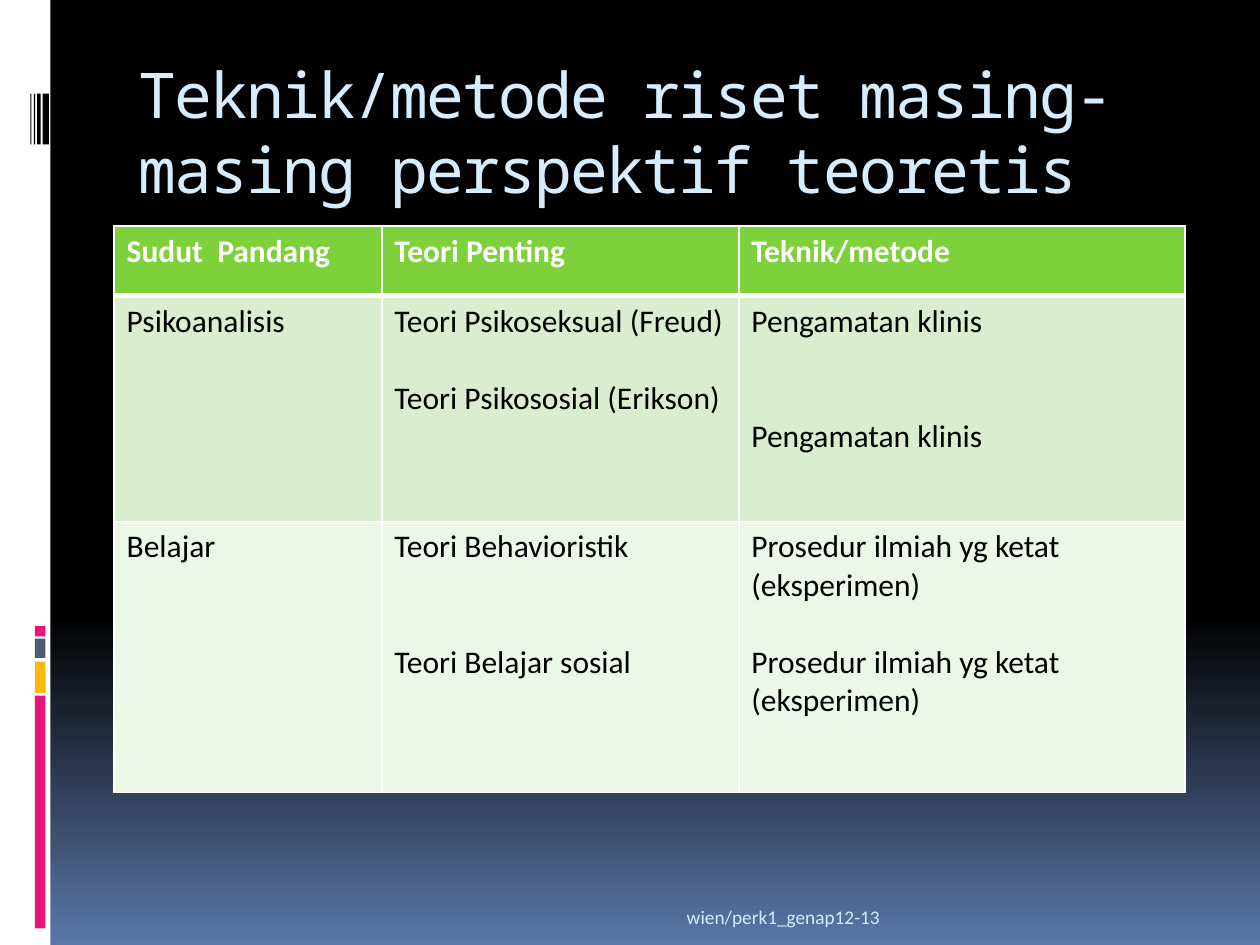
from lxml import etree
from pptx import Presentation, util as u
from pptx.dml.color import RGBColor
from pptx.enum import shapes, text
from pptx.oxml.ns import qn

PINK, BLACK, WHITE, PALE = "EA157A", "000000", "FFFFFF", "D6ECFF"
LINE = 22


def color(value):
    return RGBColor.from_string(value)


def write(para, words, size=18, font="Calibri", ink=BLACK, bold=False, tracking=0):
    span = para.add_run()
    span.text = words
    span.font.size = u.Pt(size)
    span.font.name = font
    span.font.color.rgb = color(ink)
    span.font.bold = bold
    if tracking:
        span._r.get_or_add_rPr().set("spc", str(tracking * 100))


class SlideBuilder:
    def __init__(self, slide):
        self.slide = slide

    def background(self, top, bottom, start):
        fill = self.slide.background.fill
        fill.gradient()
        fill.gradient_angle = 270
        for stop, ink, position in zip(fill.gradient_stops, (top, bottom), (start, 1)):
            stop.color.rgb = color(ink)
            stop.position = position

    def bar(self, left, top, width, height, ink):
        shape = self.slide.shapes.add_shape(
            shapes.MSO_SHAPE.RECTANGLE, *map(u.Pt, (left, top, width, height)))
        shape.shadow.inherit = False
        shape.fill.solid()
        shape.fill.fore_color.rgb = color(ink)
        shape.line.fill.background()

    def label(self, left, top, width, height, words, anchor="TOP", align="LEFT",
              spacing=None, inset=3.6, **style):
        box = self.slide.shapes.add_textbox(*map(u.Pt, (left, top, width, height)))
        frame = box.text_frame
        frame.word_wrap = True
        frame.margin_top = u.Pt(inset)
        frame.vertical_anchor = text.MSO_ANCHOR[f"{anchor}"]
        para = frame.paragraphs[0]
        para.alignment = text.PP_ALIGN[align]
        if spacing:
            para.line_spacing = u.Pt(spacing)
        write(para, words, **style)

    def borders(self, cell, below):
        props = cell._tc.get_or_add_tcPr()
        for index, (side, weight) in enumerate(
                (("lnL", 1), ("lnR", 1), ("lnT", 1), ("lnB", below))):
            line = etree.Element(qn(f"a:{side}"), w=str(u.Pt(weight)))
            fill = etree.SubElement(line, qn("a:solidFill"))
            etree.SubElement(fill, qn("a:srgbClr"), val=WHITE)
            props.insert(index, line)

    def cell(self, cell, lines, gap, fill, header):
        cell.fill.solid()
        cell.fill.fore_color.rgb = color(fill)
        self.borders(cell, 3 if header else 1)
        frame = cell.text_frame
        for index, words in enumerate(lines):
            para = frame.add_paragraph() if index else frame.paragraphs[0]
            if index:
                para.space_before = u.Pt(gap * LINE)
            write(para, words, ink=WHITE if header else BLACK, bold=header)

    def table(self, left, top, widths, heights, rows, fills):
        frame = self.slide.shapes.add_table(
            len(heights), len(widths),
            *map(u.Pt, (left, top, sum(widths), sum(heights))))
        table = frame.table
        for column, width in zip(table.columns, widths):
            column.width = u.Pt(width)
        for r, (height, fill) in enumerate(zip(heights, fills)):
            table.rows[r].height = u.Pt(height)
            for c, (gap, *lines) in enumerate(rows[r]):
                self.cell(table.cell(r, c), lines, gap, fill, r == 0)


def main():
    deck = Presentation()
    deck.slide_width, deck.slide_height = u.Pt(720), u.Pt(540)
    page = SlideBuilder(deck.slides.add_slide(deck.slide_layouts[6]))
    page.background(BLACK, "5B77A8", 0.65)

    page.bar(0, 0, 28.8, 540, WHITE)
    for top, height, ink in ((397.5, 133, PINK), (378, 18, "FEB80A"),
                             (365, 11, "4E5B6F"), (357.7, 6, PINK)):
        page.bar(20, top, 6, height, ink)
    for left, width in ((24.4, 3.6), (21.2, 2), (19.4, 0.8), (17.3, 0.7)):
        page.bar(left, 53.5, width, 29, BLACK)

    page.label(72, 505.5, 438, 28.8, "wien/perk1_genap12-13",
               anchor="BOTTOM", align="RIGHT", size=11, ink=PALE)
    experiment = "Prosedur ilmiah yg ketat (eksperimen)"
    rows = [
        [(0, "Sudut  Pandang"), (0, "Teori Penting"), (0, "Teknik/metode")],
        [(0, "Psikoanalisis"),
         (1, "Teori Psikoseksual (Freud)", "Teori Psikososial (Erikson)"),
         (2, "Pengamatan klinis", "Pengamatan klinis")],
        [(0, "Belajar"),
         (2, "Teori Behavioristik", "Teori Belajar sosial"),
         (1, experiment, experiment)],
    ]
    page.table(65.2, 129, (153, 204, 255), (40, 129, 155), rows,
               ("7FD13B", "D8EECE", "ECF7E8"))
    page.label(72, 26, 612, 72,
               "Teknik/metode riset masing-masing perspektif teoretis",
               spacing=43, inset=6, size=36, font="Noto Sans Mono",
               ink=PALE, tracking=-1)
    deck.save("out.pptx")


if __name__ == "__main__":
    main()
